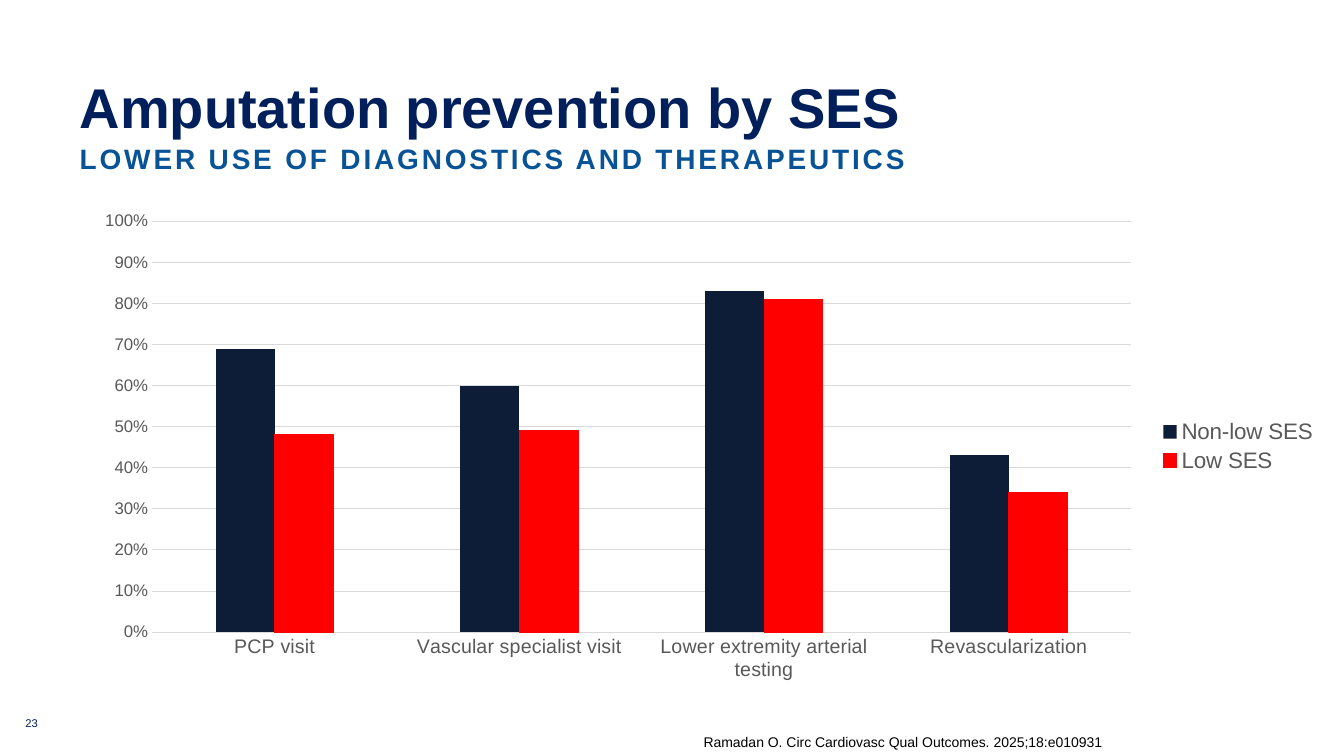
from lxml import etree
from pptx import Presentation
from pptx.chart.data import CategoryChartData
from pptx.dml.color import RGBColor
from pptx.enum.chart import XL_CHART_TYPE as ChartType, XL_LEGEND_POSITION as LegendPosition, XL_TICK_MARK as TickMark
from pptx.enum.text import MSO_ANCHOR as Anchor, MSO_AUTO_SIZE as AutoSize, PP_ALIGN as Align
from pptx.oxml.ns import qn
from pptx.util import Cm, Pt

NAVY, BLUE, GREY, GRID = "011F5B", "085296", "595959", "D9D9D9"


def set_font(font, size, color, bold=False):
    font.name = "Arial"
    font.size = Pt(size)
    font.bold = bold
    font.color.rgb = RGBColor.from_string(color)


def write_text(shape, place, text, size, color, bold=False, anchor=Anchor.TOP):
    """Place a shape, clear its margins and give it one left-aligned run."""
    shape.left, shape.top, shape.width, shape.height = [Cm(length) for length in place]
    frame = shape.text_frame
    frame.margin_left = frame.margin_top = frame.margin_right = frame.margin_bottom = 0
    frame.word_wrap = True
    frame.auto_size = AutoSize.NONE
    frame.vertical_anchor = anchor
    paragraph = frame.paragraphs[0]
    paragraph.alignment = Align.LEFT
    run = paragraph.add_run()
    run.text = text
    set_font(run.font, size, color, bold)
    return paragraph


prs = Presentation()
prs.slide_width, prs.slide_height = Cm(33.87), Cm(19.05)
slide = prs.slides.add_slide(prs.slide_layouts[5])

# Headings
title = write_text(slide.shapes.title, (2.01, 2.01, 29.87, 1.55),
                   "Amputation prevention by SES", 40, NAVY, bold=True)
title.line_spacing = 0.9

subtitle = write_text(slide.shapes.add_textbox(0, 0, 0, 0), (2.01, 3.56, 29.87, 0.97),
                      "LOWER USE OF DIAGNOSTICS AND THERAPEUTICS", 20, BLUE, bold=True)
subtitle.space_after = Pt(3)
subtitle.runs[0].font._element.set("spc", "200")

# Care received by socioeconomic status
care_data = CategoryChartData(number_format="0%")
care_data.categories = ["PCP visit", "Vascular specialist visit",
                        "Lower extremity arterial testing", "Revascularization"]
care_data.add_series("Non-low SES", (0.69, 0.60, 0.83, 0.43))
care_data.add_series("Low SES", (0.48, 0.49, 0.81, 0.34))
chart = slide.shapes.add_chart(ChartType.COLUMN_CLUSTERED, Cm(2.01), Cm(5.11),
                               Cm(31.47), Cm(12.27), care_data).chart
chart.has_title = False
set_font(chart.font, 10, "000000")

chart.has_legend = True
chart.legend.position = LegendPosition.RIGHT
chart.legend.include_in_layout = False
set_font(chart.legend.font, 16, GREY)

bars = chart.plots[0]
bars.gap_width = 216
bars.overlap = 0
bars.vary_by_categories = False
for series, color in zip(bars.series, ("0D1D37", "FF0000")):
    series.invert_if_negative = False
    series.format.fill.solid()
    series.format.fill.fore_color.rgb = RGBColor.from_string(color)
low_ses_outline = bars.series[1].format.line
low_ses_outline.color.rgb = RGBColor.from_string("FF0000")
low_ses_outline.width = Pt(0.75)

care_axis, share_axis = chart.category_axis, chart.value_axis
for axis, size in ((care_axis, 14), (share_axis, 12)):
    axis.major_tick_mark = axis.minor_tick_mark = TickMark.NONE
    set_font(axis.tick_labels.font, size, GREY)
share_axis.minimum_scale, share_axis.maximum_scale, share_axis.major_unit = 0, 1, 0.1
share_axis.tick_labels.number_format = "0%"
share_axis.tick_labels.number_format_is_linked = False
share_axis.format.line.fill.background()
share_axis.has_major_gridlines = True
for line in (care_axis.format.line, share_axis.major_gridlines.format.line):
    line.color.rgb = RGBColor.from_string(GRID)
    line.width = Pt(0.75)

# Fixed plot area, as fractions of the chart
plot_area = chart._chartSpace.find(".//" + qn("c:plotArea"))
for automatic_layout in plot_area.findall(qn("c:layout")):
    plot_area.remove(automatic_layout)
layout = etree.Element(qn("c:layout"))
plot_area.insert(0, layout)
manual = etree.SubElement(layout, qn("c:manualLayout"))
for tag, value in (("layoutTarget", "inner"), ("xMode", "edge"), ("yMode", "edge"),
                   ("x", "0.058"), ("y", "0.038"), ("w", "0.784"), ("h", "0.844")):
    etree.SubElement(manual, qn("c:" + tag)).set("val", value)

# Footer
write_text(slide.shapes.add_textbox(0, 0, 0, 0), (0.64, 17.88, 0.74, 0.51),
           "23", 8, NAVY, anchor=Anchor.BOTTOM)
write_text(slide.shapes.add_textbox(0, 0, 0, 0), (17.73, 18.47, 10.34, 0.43),
           "Ramadan O. Circ Cardiovasc Qual Outcomes. 2025;18:e010931", 10, "000000",
           anchor=Anchor.BOTTOM)

prs.save("out.pptx")
